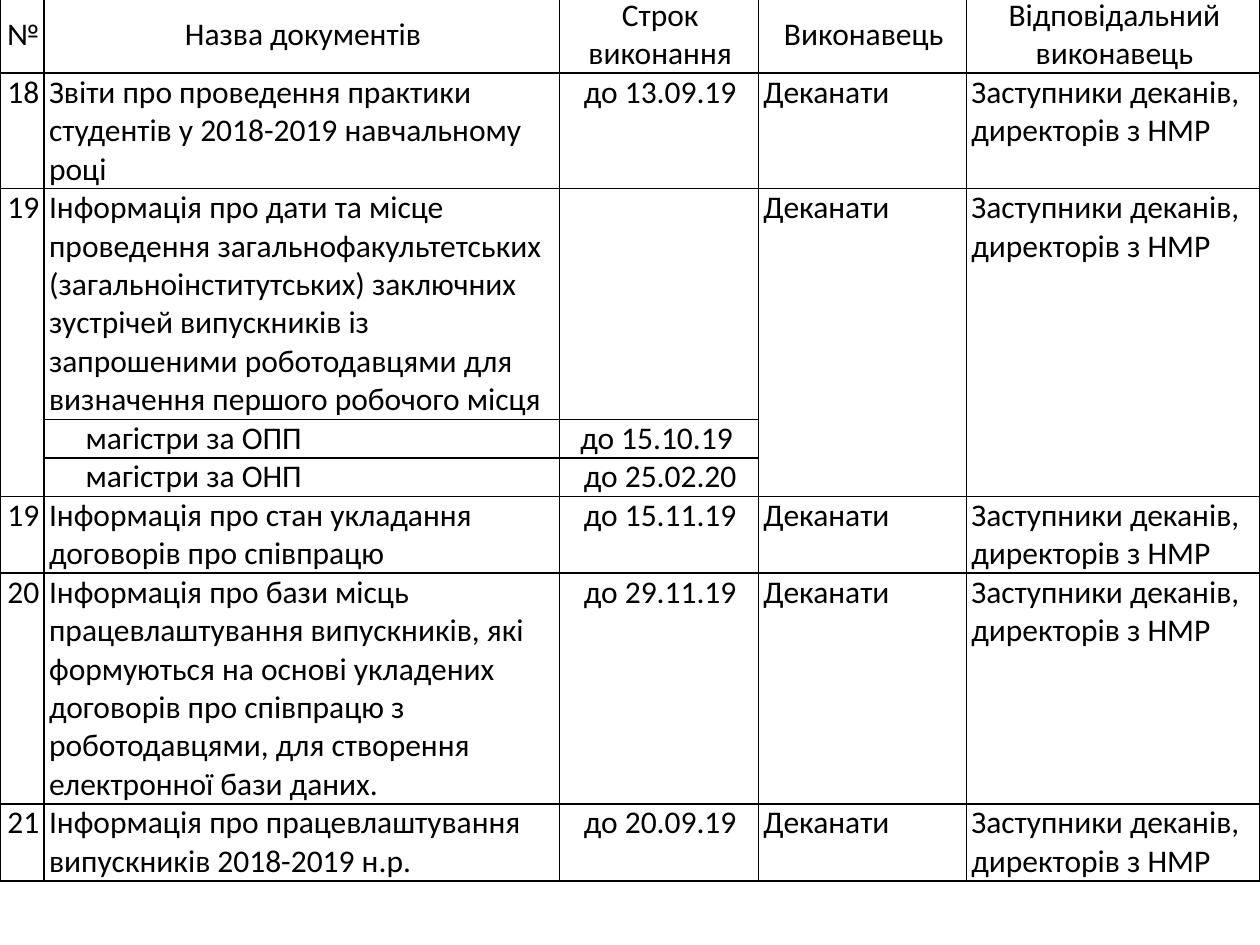
"""Build a slide with a table of document deadlines."""
from lxml import etree
from pptx import Presentation
from pptx.dml.color import RGBColor
from pptx.enum import text
from pptx.oxml.ns import qn
from pptx.util import Inches, Pt


def color(value):
    return RGBColor.from_string(value)


def add_borders(cell):
    properties = cell._tc.get_or_add_tcPr()
    for index, side in enumerate(("lnL", "lnR", "lnT", "lnB")):
        line = etree.Element(qn(f"a:{side}"), w=str(Pt(1)))
        fill = etree.SubElement(line, qn("a:solidFill"))
        etree.SubElement(fill, qn("a:srgbClr"), val="000000")
        properties.insert(index, line)


PERFORMER = "Деканати"
RESPONSIBLE = "Заступники деканів, директорів з НМР"
HEADERS = ("№", "Назва документів", "Строк виконання", "Виконавець", "Відповідальний виконавець")
DOCUMENTS = [
    ("18", "Звіти про проведення практики студентів у 2018-2019 навчальному році", "до 13.09.19"),
    ("19", "Інформація про дати та місце проведення загальнофакультетських "
           "(загальноінститутських) заключних зустрічей випускників із запрошеними "
           "роботодавцями для визначення першого робочого місця", ""),
    ("", "магістри за ОПП", "до 15.10.19 "),
    ("", "магістри за ОНП", "до 25.02.20"),
    ("19", "Інформація про стан укладання договорів про співпрацю", "до 15.11.19"),
    ("20", "Інформація про бази місць працевлаштування випускників, які формуються на "
           "основі укладених договорів про співпрацю з роботодавцями, для створення "
           "електронної бази даних.", "до 29.11.19"),
    ("21", "Інформація про працевлаштування випускників 2018-2019 н.р.", "до 20.09.19"),
]
COLUMN_WIDTHS = (0.35, 4.09, 1.58, 1.65, 2.33)
ROW_HEIGHTS = (0.15, 0.22, 0.22, 0.07, 0.07, 0.22, 0.22, 0.22)
CENTERED_COLUMNS = (0, 2)
MERGED_COLUMNS = (0, 3, 4)

rows = [HEADERS]
for number, name, deadline in DOCUMENTS:
    people = (PERFORMER, RESPONSIBLE) if number else ("", "")
    rows.append((number, name, deadline, *people))

presentation = Presentation()
presentation.slide_width = Inches(10)
presentation.slide_height = Inches(7.5)
slide = presentation.slides.add_slide(presentation.slide_layouts[6])

frame = slide.shapes.add_table(
    len(rows), len(HEADERS), Inches(0), Inches(-0.03), Inches(10), Inches(6.9))
table = frame.table
table.first_row = False
table.horz_banding = False
for column, width in zip(table.columns, COLUMN_WIDTHS):
    column.width = Inches(width)
for row, height in zip(table.rows, ROW_HEIGHTS):
    row.height = Inches(height)
frame.width, frame.height = Inches(10), Inches(6.9)

for row_index, values in enumerate(rows):
    is_header = row_index == 0
    for column_index, value in enumerate(values):
        cell = table.cell(row_index, column_index)
        cell.fill.solid()
        cell.fill.fore_color.rgb = color("FFFFFF")
        add_borders(cell)
        cell.margin_left, cell.margin_right = Inches(0.04), Inches(0.02)
        cell.margin_top = cell.margin_bottom = Inches(0)
        cell.vertical_anchor = text.MSO_ANCHOR.MIDDLE if is_header else text.MSO_ANCHOR.TOP
        if not value:
            continue
        paragraph = cell.text_frame.paragraphs[0]
        centered = is_header or column_index in CENTERED_COLUMNS
        paragraph.alignment = text.PP_ALIGN.CENTER if centered else text.PP_ALIGN.LEFT
        if column_index == 1 and not values[0]:
            paragraph._p.get_or_add_pPr().set("marL", str(Inches(0.29)))
        run = paragraph.add_run()
        run.text = value
        run.font.name = "Calibri"
        run.font.size = Pt(18)
        run.font.color.rgb = color("000000")

for column_index in MERGED_COLUMNS:
    table.cell(2, column_index).merge(table.cell(4, column_index))

presentation.save("out.pptx")
